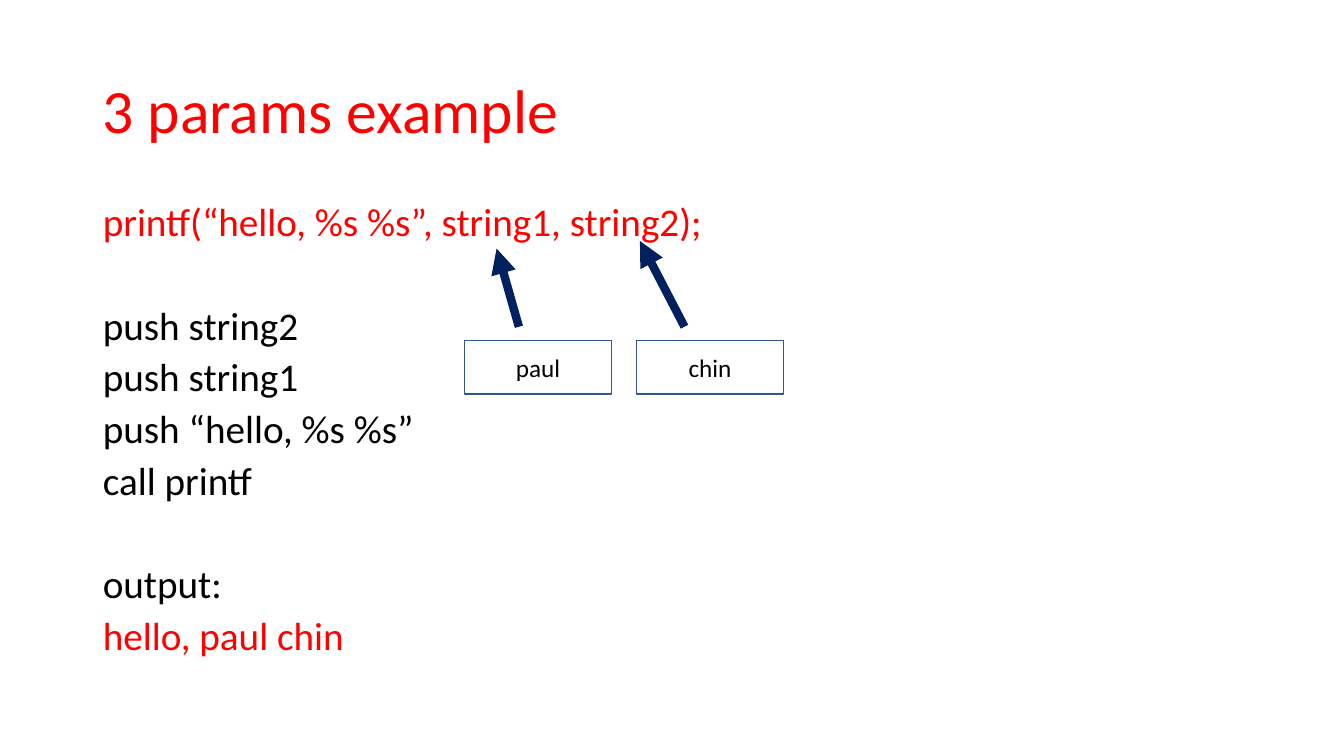
import dataclasses

import lxml.etree
import pptx
import pptx.dml.color
import pptx.enum.shapes
import pptx.enum.text
import pptx.oxml.ns
import pptx.util


@dataclasses.dataclass(frozen=True)
class Theme:
    font: str = "Calibri"
    accent: str = "FF0000"
    text: str = "000000"
    paper: str = "FFFFFF"
    outline: str = "325491"
    arrow: str = "002060"
    title_size: int = 44
    code_size: int = 28
    label_size: int = 18
    outline_width: int = 1
    arrow_width: int = 6
    code_gap: int = 10
    section_gap: int = 47


@dataclasses.dataclass(frozen=True)
class Box:
    left: float
    top: float
    width: float
    height: float

    def point(self, across, down):
        return int(self.left + across * self.width), int(self.top + down * self.height)

    def region(self, across, down, wide, high):
        return Box(*self.point(across, down), int(wide * self.width), int(high * self.height))


THEME = Theme()

# Each section of the code listing: its lines and their colours
SECTIONS = [
    [("printf(“hello, %s %s”, string1, string2);", THEME.accent)],
    [("push string2", THEME.text),
     ("push string1", THEME.text),
     ("push “hello, %s %s”", THEME.text),
     ("call printf", THEME.text)],
    [("output:", THEME.text),
     ("hello, paul chin", THEME.accent)],
]

# Value, left edge of its label, arrow start and arrow tip, as shares of the region
ARGUMENTS = [
    ("paul", 0, (0.17, 0.56), (0.1, 0.05)),
    ("chin", 0.54, (0.69, 0.56), (0.55, 0)),
]


def rgb(colour):
    return pptx.dml.color.RGBColor.from_string(colour)


def place(shape, box):
    shape.left, shape.top, shape.width, shape.height = box.left, box.top, box.width, box.height


def style(paragraph, size, colour, align=pptx.enum.text.PP_ALIGN.LEFT):
    paragraph.alignment = align
    paragraph.font.name = THEME.font
    paragraph.font.size = pptx.util.Pt(size)
    paragraph.font.color.rgb = rgb(colour)


def add_title(slide, box):
    title = slide.shapes.title
    place(title, box)
    title.text_frame.text = "3 params example"
    title.text_frame.vertical_anchor = pptx.enum.text.MSO_ANCHOR.MIDDLE
    title.text_frame.auto_size = pptx.enum.text.MSO_AUTO_SIZE.NONE
    heading = title.text_frame.paragraphs[0]
    heading.line_spacing = 0.9
    style(heading, THEME.title_size, THEME.accent)


def add_code(slide, box):
    listing = slide.placeholders[1]
    place(listing, box)
    frame = listing.text_frame
    frame.auto_size = pptx.enum.text.MSO_AUTO_SIZE.NONE
    lines = [line for section in SECTIONS for line in section]
    section_starts = [section[0] for section in SECTIONS[1:]]
    frame.text = "\n".join(text for text, _ in lines)
    for paragraph, line in zip(frame.paragraphs, lines):
        gap = THEME.section_gap if line in section_starts else THEME.code_gap
        paragraph.space_before = pptx.util.Pt(gap)
        paragraph.line_spacing = 0.8
        style(paragraph, THEME.code_size, line[1])
        # No bullet and no hanging indent
        properties = paragraph._p.get_or_add_pPr()
        properties.set("marL", "0")
        properties.set("indent", "0")
        bullet = lxml.etree.Element(pptx.oxml.ns.qn("a:buNone"))
        properties.find(pptx.oxml.ns.qn("a:spcBef")).addnext(bullet)


def add_label(slide, box, value):
    label = slide.shapes.add_shape(
        pptx.enum.shapes.MSO_SHAPE.RECTANGLE, box.left, box.top, box.width, box.height)
    label.shadow.inherit = False
    label.fill.solid()
    label.fill.fore_color.rgb = rgb(THEME.paper)
    label.line.color.rgb = rgb(THEME.outline)
    label.line.width = pptx.util.Pt(THEME.outline_width)
    label.text_frame.text = value
    label.text_frame.vertical_anchor = pptx.enum.text.MSO_ANCHOR.MIDDLE
    style(label.text_frame.paragraphs[0], THEME.label_size, THEME.text,
          pptx.enum.text.PP_ALIGN.CENTER)


def add_arrow(slide, start, tip):
    arrow = slide.shapes.add_connector(
        pptx.enum.shapes.MSO_CONNECTOR.STRAIGHT, *start, *tip)
    arrow.line.color.rgb = rgb(THEME.arrow)
    arrow.line.width = pptx.util.Pt(THEME.arrow_width)
    # Arrowhead at the tip, no shadow
    properties = arrow._element.spPr
    outline = properties.find(pptx.oxml.ns.qn("a:ln"))
    lxml.etree.SubElement(outline, pptx.oxml.ns.qn("a:tailEnd"), type="triangle")
    lxml.etree.SubElement(properties, pptx.oxml.ns.qn("a:effectLst"))


def add_arguments(slide, box):
    for value, left, start, tip in ARGUMENTS:
        add_arrow(slide, box.point(*start), box.point(*tip))
        add_label(slide, box.region(left, 0.65, 0.46, 0.35), value)


def main():
    deck = pptx.Presentation()
    deck.slide_width = pptx.util.Inches(13.33)
    deck.slide_height = pptx.util.Inches(7.5)
    # The page counts in hundredths of the slide's size
    page = Box(0, 0, deck.slide_width / 100, deck.slide_height / 100)
    slide = deck.slides.add_slide(deck.slide_layouts[1])

    add_code(slide, page.region(6.9, 26.67, 86.25, 63.47))
    add_title(slide, page.region(6.9, 5.33, 86.25, 19.33))
    add_arguments(slide, page.region(34.58, 31.87, 23.7, 20.27))
    deck.save("out.pptx")


if __name__ == "__main__":
    main()
